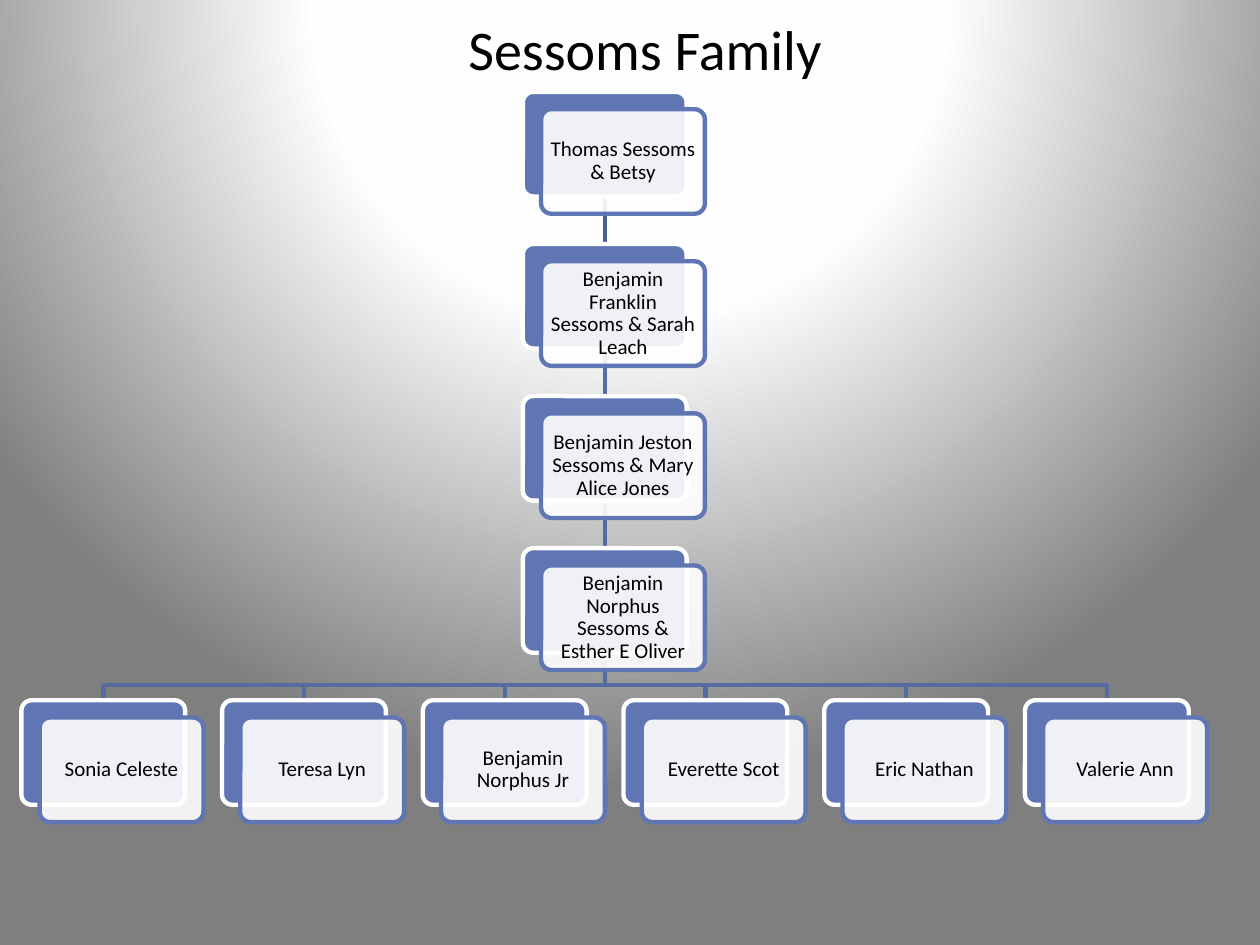
from lxml import etree
from pptx import Presentation
from pptx.dml.color import RGBColor
from pptx.enum.shapes import MSO_CONNECTOR, MSO_SHAPE
from pptx.enum.text import MSO_ANCHOR, PP_ALIGN
from pptx.oxml import parse_xml
from pptx.oxml.ns import nsdecls, qn
from pptx.util import Inches, Pt

CENTER, MIDDLE = PP_ALIGN.CENTER, MSO_ANCHOR.MIDDLE
ROUNDED, STRAIGHT = MSO_SHAPE.ROUNDED_RECTANGLE, MSO_CONNECTOR.STRAIGHT

# Content
TITLE = "Sessoms Family"
ANCESTORS = [
    "Thomas Sessoms & Betsy",
    "Benjamin Franklin Sessoms & Sarah Leach",
    "Benjamin Jeston Sessoms & Mary Alice Jones",
    "Benjamin Norphus Sessoms & Esther E Oliver",
]
CHILDREN = ["Sonia Celeste", "Teresa Lyn", "Benjamin Norphus Jr",
            "Everette Scot", "Eric Nathan", "Valerie Ann"]

# Colours
BLACK = RGBColor(0x00, 0x00, 0x00)
WHITE = RGBColor(0xFF, 0xFF, 0xFF)
BLUE = RGBColor(0x60, 0x76, 0xB4)
ROOT_LINK = RGBColor(0x4D, 0x5E, 0x90)
LINK = RGBColor(0x57, 0x6B, 0xA3)
BACKGROUND_STOPS = [(0, "FFFFFF"), (40, "FEFEFE"), (100, "7F7F7F")]

# Layout in inches
CARD_WIDTH, CARD_HEIGHT = 1.3, 0.83
FRONT_OFFSET_X, FRONT_OFFSET_Y = 0.145, 0.137
ANCESTOR_LEFT, TOP, ROW_STEP = 4.15, 0.73, 1.207
CHILD_LEFT, COLUMN_STEP = 0.17, 1.593
ELBOW_RISE = 0.12
LINE_WIDTH = Pt(2.5)


def set_background(slide):
    slide.background.fill.solid()
    solid = slide.background._cSld.find(".//" + qn("a:solidFill"))
    stops = "".join(f'<a:gs pos="{position * 1000}"><a:srgbClr val="{color}"/></a:gs>'
                    for position, color in BACKGROUND_STOPS)
    gradient = parse_xml(
        f'<a:gradFill {nsdecls("a")} rotWithShape="1"><a:gsLst>{stops}</a:gsLst>'
        '<a:path path="circle"><a:fillToRect l="50000" t="-80000" r="50000" b="180000"/>'
        '</a:path></a:gradFill>')
    solid.getparent().replace(solid, gradient)


def style_line(shape, color):
    shape.line.color.rgb = color
    shape.line.width = LINE_WIDTH


def write_text(shape, text, size, inset, spacing):
    frame = shape.text_frame
    settings = {"word_wrap": True, "vertical_anchor": MIDDLE}
    settings.update({f"margin_{side}": Inches(inset)
                     for side in ("left", "right", "top", "bottom")})
    for name, value in settings.items():
        setattr(frame, name, value)
    paragraph = frame.paragraphs[0]
    paragraph.text = text
    paragraph.alignment = CENTER
    paragraph.line_spacing = spacing
    for name, value in {"name": "Calibri", "size": Pt(size)}.items():
        setattr(paragraph.font, name, value)
    paragraph.font.color.rgb = BLACK


def add_panel(slide, left, top, fill, outline):
    panel = slide.shapes.add_shape(ROUNDED, Inches(left), Inches(top),
                                   Inches(CARD_WIDTH), Inches(CARD_HEIGHT))
    panel.adjustments[0] = 0.1
    panel.shadow.inherit = False
    panel.fill.solid()
    panel.fill.fore_color.rgb = fill
    style_line(panel, outline)
    return panel


def add_card(slide, name, left, top):
    add_panel(slide, left, top, BLUE, WHITE)
    front = add_panel(slide, left + FRONT_OFFSET_X, top + FRONT_OFFSET_Y, WHITE, BLUE)
    color = front.fill._xPr.find(qn("a:solidFill"))[0]
    etree.SubElement(color, qn("a:alpha")).set("val", "90000")
    write_text(front, name, 12, 0.05, 0.9)


def add_straight_link(slide, x, top, bottom, color):
    link = slide.shapes.add_connector(STRAIGHT, Inches(x), Inches(top),
                                      Inches(x), Inches(bottom))
    style_line(link, color)
    etree.SubElement(link._element.spPr, qn("a:effectLst"))


def add_elbow_link(slide, start_x, end_x, top, bottom):
    bend = bottom - ELBOW_RISE
    builder = slide.shapes.build_freeform(Inches(start_x), Inches(top))
    points = [(start_x, bend), (end_x, bend), (end_x, bottom)]
    builder.add_line_segments([(Inches(x), Inches(y)) for x, y in points], close=False)
    link = builder.convert_to_shape()
    link.fill.background()
    link.shadow.inherit = False
    style_line(link, LINK)


def main():
    presentation = Presentation()
    presentation.slide_width, presentation.slide_height = Inches(10), Inches(7.5)
    slide = presentation.slides.add_slide(presentation.slide_layouts[6])
    set_background(slide)

    row_tops = [TOP + row * ROW_STEP for row in range(len(ANCESTORS) + 1)]
    child_lefts = [CHILD_LEFT + column * COLUMN_STEP for column in range(len(CHILDREN))]
    trunk_x = ANCESTOR_LEFT + CARD_WIDTH / 2

    # Links behind the cards
    for left in reversed(child_lefts):
        add_elbow_link(slide, trunk_x, left + CARD_WIDTH / 2,
                       row_tops[-2] + CARD_HEIGHT, row_tops[-1])
    for row in range(len(ANCESTORS) - 1):
        add_straight_link(slide, trunk_x, row_tops[row] + CARD_HEIGHT,
                          row_tops[row + 1], LINK if row else ROOT_LINK)

    # Cards
    for name, top in zip(ANCESTORS, row_tops):
        add_card(slide, name, ANCESTOR_LEFT, top)
    for name, left in zip(CHILDREN, child_lefts):
        add_card(slide, name, left, row_tops[-1])

    # Title
    title = slide.shapes.add_textbox(Inches(2.58), Inches(0.17), Inches(5.08), Inches(0.42))
    write_text(title, TITLE, 32, 0.05, 1.0)

    presentation.save("out.pptx")


if __name__ == "__main__":
    main()
